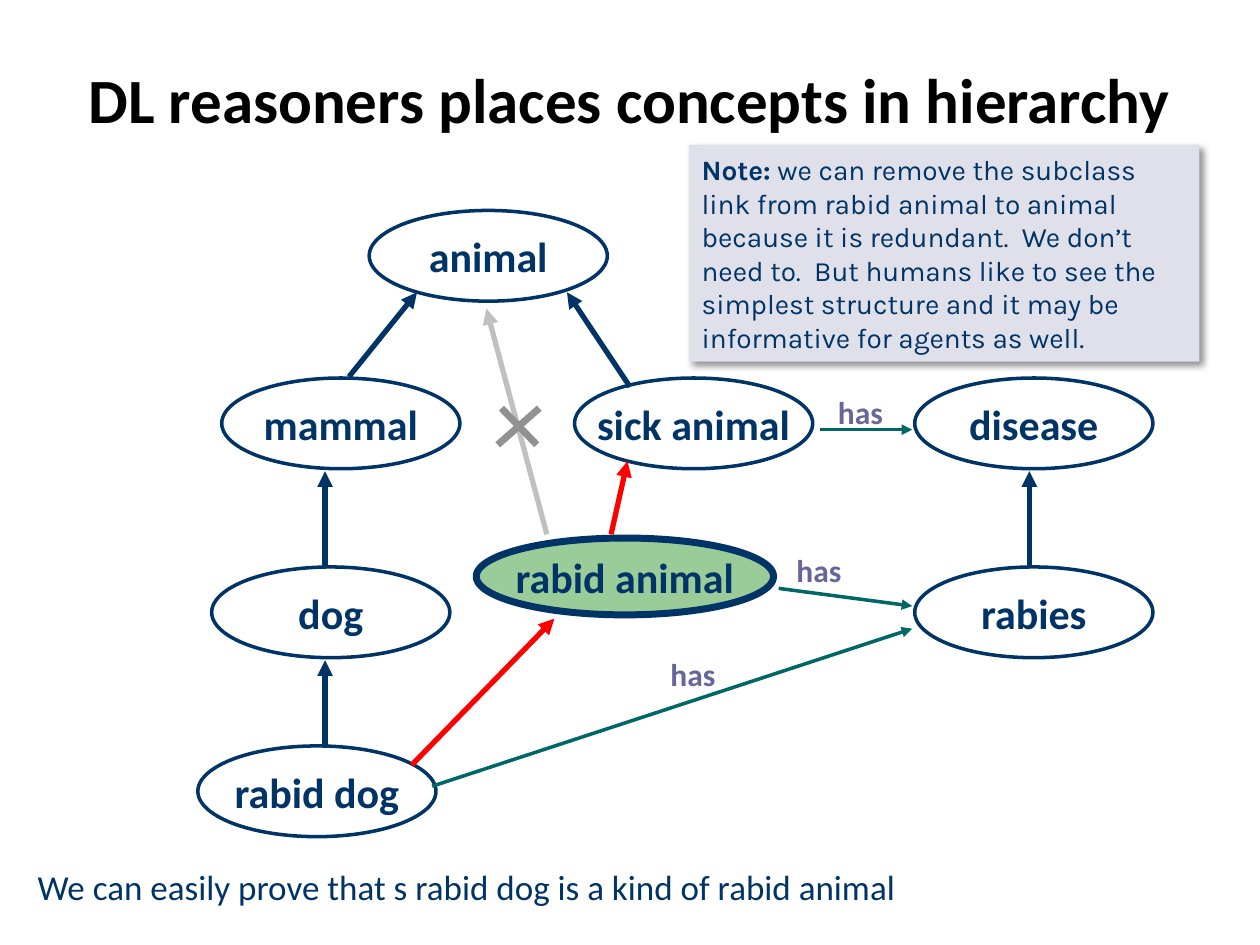
from lxml import etree
from pptx import Presentation
from pptx.dml.color import RGBColor
from pptx.enum.shapes import MSO_CONNECTOR, MSO_SHAPE
from pptx.enum.text import MSO_ANCHOR, PP_ALIGN
from pptx.oxml import parse_xml
from pptx.oxml.ns import nsdecls, qn
from pptx.util import Inches, Pt

STRAIGHT = MSO_CONNECTOR.STRAIGHT
OVAL = MSO_SHAPE.OVAL
RECTANGLE = MSO_SHAPE.RECTANGLE
MIDDLE = MSO_ANCHOR.MIDDLE
BOTTOM = MSO_ANCHOR.BOTTOM
CENTER = PP_ALIGN.CENTER
LEFT = PP_ALIGN.LEFT

COLORS = {
    "black": "000000", "white": "FFFFFF", "navy": "003366", "teal": "006666",
    "red": "FF0000", "silver": "C0C0C0", "gray": "919191", "purple": "666699",
    "green": "99CC99", "lavender": "E0E0EB",
}

TITLE = "DL reasoners places concepts in hierarchy"
NOTE = [
    ("Note:", True),
    (" we can remove the subclass link from rabid animal to animal because it is "
     "redundant.  We don’t need to.  But humans like to see the simplest structure "
     "and it may be informative for agents as well.", False),
]
CONCLUSION = "We can easily prove that s rabid dog is a kind of rabid animal"

CONCEPT_SIZE = (1.89, 0.72)
CONCEPTS = [
    ("animal", 2.93, 1.67),
    ("mammal", 1.76, 3),
    ("dog", 1.68, 4.5),
    ("sick animal", 4.56, 3),
    ("rabies", 7.26, 4.5),
    ("disease", 7.26, 3),
    ("rabid dog", 1.57, 5.92),
]
LINK_STYLES = {
    "subclass": ("navy", 3, True),
    "inferred": ("red", 3, True),
    "redundant": ("silver", 3, True),
    "has": ("teal", 2, True),
    "cross": ("gray", 4, False),
}
LINKS = [
    ("subclass", (2.77, 2.99), (3.31, 2.32)),
    ("subclass", (5, 3.07), (4.5, 2.32)),
    ("subclass", (2.58, 4.49), (2.58, 3.74)),
    ("subclass", (8.17, 4.49), (8.17, 3.74)),
    ("subclass", (2.58, 5.91), (2.58, 5.24)),
    ("has", (6.51, 3.41), (7.24, 3.41)),
    ("has", (3.43, 6.24), (7.24, 4.99)),
    ("has", (6.18, 4.67), (7.24, 4.81)),
    ("inferred", (3.27, 6.07), (4.4, 4.91)),
    ("inferred", (4.85, 4.24), (4.98, 3.66)),
    ("redundant", (4.34, 4.24), (3.86, 2.45)),
    ("cross", (4.28, 3.24), (3.95, 3.53)),
    ("cross", (3.98, 3.24), (4.26, 3.53)),
]
HAS_LABELS = [(6.41, 3.07), (5.08, 5.15), (6.08, 4.32)]


def rgb(name):
    return RGBColor.from_string(COLORS[name])


def write(shape, runs, size, color="navy", font="Calibri", align=LEFT):
    paragraph = shape.text_frame.paragraphs[0]
    paragraph.alignment = align
    paragraph.font.size = Pt(size)
    paragraph.font.name = font
    paragraph.font.color.rgb = rgb(color)
    for text, bold in runs:
        run = paragraph.add_run()
        run.text = text
        run.font.bold = bold
    return paragraph


def add_filled(slide, preset, box, fill):
    shape = slide.shapes.add_shape(preset, *map(Inches, box))
    shape.shadow.inherit = False
    shape.fill.solid()
    shape.fill.fore_color.rgb = rgb(fill)
    shape.text_frame.vertical_anchor = MIDDLE
    return shape


def add_concept(slide, text, box, fill="white", width=2):
    shape = add_filled(slide, OVAL, box, fill)
    shape.line.color.rgb = rgb("navy")
    shape.line.width = Pt(width)
    frame = shape.text_frame
    frame.word_wrap = False
    frame.margin_left = frame.margin_right = 0
    write(shape, [(text, True)], 24, align=CENTER)


def add_link(slide, kind, start, end):
    color, width, arrow = LINK_STYLES[kind]
    link = slide.shapes.add_connector(STRAIGHT, *map(Inches, start + end))
    link.line.color.rgb = rgb(color)
    link.line.width = Pt(width)
    if arrow:
        etree.SubElement(link.line._get_or_add_ln(), qn("a:tailEnd"), type="triangle")
    etree.SubElement(link._element.spPr, qn("a:effectLst"))


def add_text(slide, text, box, size, color="navy", bold=False, align=LEFT):
    shape = slide.shapes.add_textbox(*map(Inches, box))
    shape.text_frame.word_wrap = True
    write(shape, [(text, bold)], size, color, align=align)


def add_note(slide):
    shape = add_filled(slide, RECTANGLE, (5.47, 1.15, 4.05, 1.72), "lavender")
    shape.line.fill.background()
    write(shape, NOTE, 16, font="Karla")
    effects = shape._element.spPr.find(qn("a:effectLst"))
    effects.append(parse_xml(
        f'<a:outerShdw {nsdecls("a")} blurRad="{Pt(4)}" dist="{Pt(3)}" dir="2700000">'
        f'<a:srgbClr val="{COLORS["black"]}"><a:alpha val="43000"/></a:srgbClr>'
        '</a:outerShdw>'))


def main():
    presentation = Presentation()
    presentation.slide_width = Inches(10)
    presentation.slide_height = Inches(7.5)
    slide = presentation.slides.add_slide(presentation.slide_layouts[5])

    title = slide.shapes.title
    title.left, title.top, title.width, title.height = map(Inches, (0.35, 0.28, 9.29, 0.86))
    title.text_frame.vertical_anchor = BOTTOM
    write(title, [(TITLE, True)], 36, "black", align=CENTER).line_spacing = 0.9

    for text, left, top in CONCEPTS:
        add_concept(slide, text, (left, top, *CONCEPT_SIZE))
    add_concept(slide, "rabid animal", (3.78, 4.27, 2.36, 0.61), "green", 4)
    for kind, start, end in LINKS:
        add_link(slide, kind, start, end)
    for left, top in HAS_LABELS:
        add_text(slide, "has", (left, top, 0.84, 0.41), 18, "purple", True, CENTER)
    add_note(slide)
    add_text(slide, CONCLUSION, (0.2, 6.82, 9.37, 0.44), 20)

    presentation.save("out.pptx")


if __name__ == "__main__":
    main()
